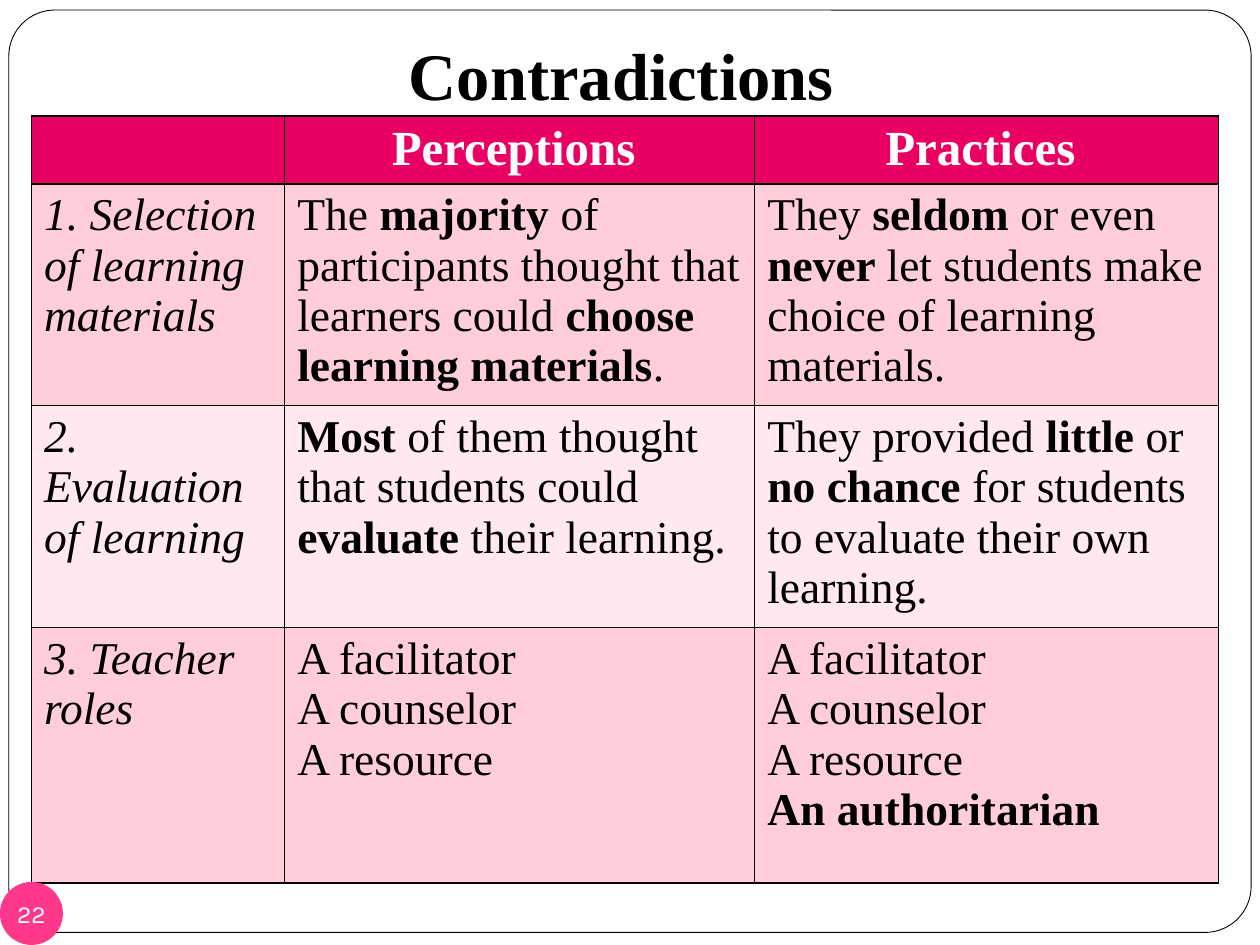
from lxml import etree
from pptx import Presentation
from pptx.dml.color import RGBColor
from pptx.enum.shapes import MSO_SHAPE
from pptx.enum.text import MSO_ANCHOR, PP_ALIGN
from pptx.oxml.ns import qn
from pptx.util import Pt

PX = 9144  # EMU per px, 100 px to the inch
ROUND, OVAL = MSO_SHAPE.ROUNDED_RECTANGLE, MSO_SHAPE.OVAL
LEFT, CENTER = PP_ALIGN.LEFT, PP_ALIGN.CENTER
MIDDLE, BOTTOM = MSO_ANCHOR.MIDDLE, MSO_ANCHOR.BOTTOM

SERIF = "Times New Roman"
THEME = {
    "paper": "FFFFFF", "line": "000000", "head": "E90062",
    "bands": ("FFCEDA", "FFE8EE"), "badge": "FF388C",
    "title": {"name": SERIF, "size": 38, "color": "000000", "bold": True},
    "label": {"name": SERIF, "size": 28, "color": "FFFFFF", "bold": True},
    "topic": {"name": SERIF, "size": 26, "color": "000000", "italic": True},
    "body": {"name": SERIF, "size": 26, "color": "000000"},
    "page": {"name": "Karla", "size": 14, "color": "FFFFFF"},
}

COLS = (201, 373, 368)
ROWS = (54, 176, 176, 203)
HEAD = ("", "Perceptions ", "Practices ")
# Asterisks enclose bold words; each line is a paragraph
BODY = (
    ("1. Selection of learning materials",
     "The *majority* of participants thought that learners could "
     "*choose learning materials*.",
     "They *seldom* or even *never *let students make choice of "
     "learning materials."),
    ("2. Evaluation of learning",
     "*Most* of them thought that students could *evaluate *their learning.",
     "They provided *little *or* no chance* for students to evaluate "
     "their own learning."),
    ("3. Teacher roles",
     "A facilitator\nA counselor\nA resource",
     "A facilitator\nA counselor\nA resource\n*An authoritarian*"),
)


def emu(*vals):
    return [round(v * PX) for v in vals]


def rgb(code):
    return RGBColor.from_string(code)


def style(font, form):
    for key, val in form.items():
        if key == "color":
            font.color.rgb = rgb(val)
        else:
            setattr(font, key, Pt(val) if key == "size" else val)


def write(frame, text, form, align=LEFT):
    for i, line in enumerate(text.split("\n")):
        para = frame.add_paragraph() if i else frame.paragraphs[0]
        para.alignment = align
        for j, part in enumerate(line.split("*")):
            if part:
                run = para.add_run()
                run.text = part
                style(run.font, form | ({"bold": True} if j % 2 else {}))


def pad(frame, sides):
    for side, val in zip(("left", "top", "right", "bottom"), emu(*sides)):
        setattr(frame, f"margin_{side}", val)


def shape(slide, kind, box, fill):
    item = slide.shapes.add_shape(kind, *emu(*box))
    item.shadow.inherit = False
    item.fill.solid()
    item.fill.fore_color.rgb = rgb(fill)
    return item


def border(cell):
    prop = cell._tc.get_or_add_tcPr()
    for i, side in enumerate(("lnL", "lnR", "lnT", "lnB")):
        line = etree.Element(qn(f"a:{side}"), w=str(Pt(1)))
        fill = etree.SubElement(line, qn("a:solidFill"))
        etree.SubElement(fill, qn("a:srgbClr"), val=THEME["line"])
        prop.insert(i, line)


def frame(slide, box):
    card = shape(slide, ROUND, box, THEME["paper"])
    card.adjustments[0] = 0.05
    card.line.color.rgb = rgb(THEME["line"])
    card.line.width = Pt(0.5)


def title(slide, box):
    text = slide.shapes.add_textbox(*emu(*box)).text_frame
    text.word_wrap = True
    text.vertical_anchor = BOTTOM
    pad(text, (10, 5, 10, 10))
    write(text, "Contradictions ", THEME["title"], CENTER)


def grid(slide, box):
    table = slide.shapes.add_table(len(ROWS), len(COLS), *emu(*box)).table
    for col, wide in zip(table.columns, emu(*COLS)):
        col.width = wide
    for row, tall in zip(table.rows, emu(*ROWS)):
        row.height = tall
    for r, texts in enumerate((HEAD, *BODY)):
        for c, text in enumerate(texts):
            cell = table.cell(r, c)
            cell.fill.solid()
            band = THEME["bands"][(r - 1) % 2] if r else THEME["head"]
            cell.fill.fore_color.rgb = rgb(band)
            border(cell)
            form = "label" if r == 0 else "body" if c else "topic"
            write(cell.text_frame, text, THEME[form], LEFT if r else CENTER)


def badge(slide, box):
    disc = shape(slide, OVAL, box, THEME["badge"])
    disc.line.fill.background()
    text = disc.text_frame
    text.word_wrap = False
    text.vertical_anchor = MIDDLE
    pad(text, (0, 0, 0, 0))
    write(text, "22", THEME["page"], CENTER)


def main():
    deck = Presentation()
    deck.slide_width, deck.slide_height = emu(1000, 750)
    slide = deck.slides.add_slide(deck.slide_layouts[6])
    frame(slide, (7, 8, 986, 732))
    grid(slide, (25, 92, sum(COLS), sum(ROWS)))
    title(slide, (50, -17, 900, 117))
    badge(slide, (0, 700, 50, 50))
    deck.save("out.pptx")


if __name__ == "__main__":
    main()
